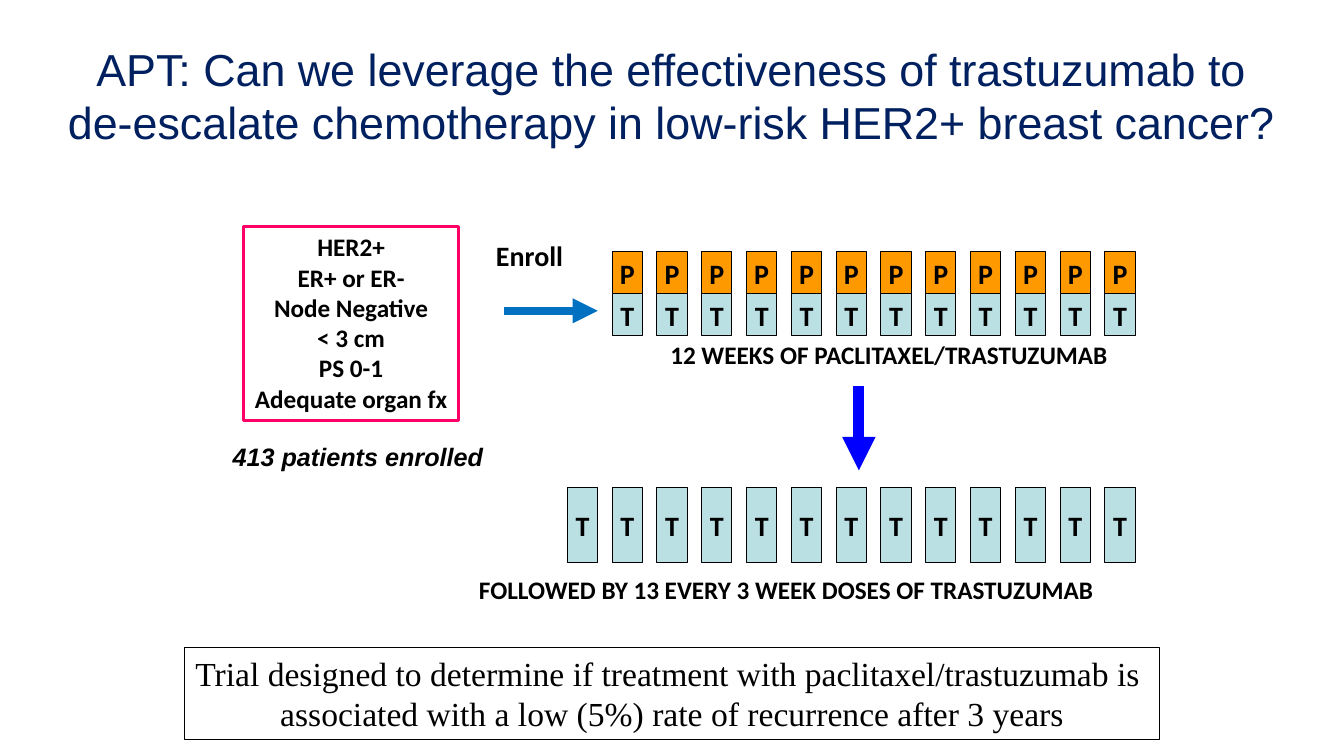
from lxml.etree import SubElement
from pptx import Presentation
from pptx.dml.color import RGBColor
from pptx.enum.shapes import MSO_CONNECTOR, MSO_SHAPE
from pptx.enum.text import MSO_ANCHOR, MSO_AUTO_SIZE, PP_ALIGN
from pptx.oxml.ns import qn
from pptx.util import Pt

TITLE = ("APT: Can we leverage the effectiveness of trastuzumab to "
         "de-escalate chemotherapy in low-risk HER2+ breast cancer?")
ELIGIBILITY = ["HER2+", "ER+ or ER-", "Node Negative", "< 3 cm", "PS 0-1",
               "Adequate organ fx"]
CONCLUSION = [
    "Trial designed to determine if treatment with paclitaxel/trastuzumab is ",
    "associated with a low (5%) rate of recurrence after 3 years",
]
BLACK = "000000"
TRASTUZUMAB_FILL = "BBE0E3"
PACLITAXEL_FILL = "FF9900"
FIRST_DOSE_LEFT = 405.3
DOSE_STEP = 32
DOSE_WIDTH = 21.6
MAINTENANCE_DOSES = 13


def rgb(value):
    return RGBColor.from_string(value)


def write(shape, lines, size=18, font="Calibri", color=BLACK, bold=False,
          italic=False, anchor=MSO_ANCHOR.TOP, wrap=False):
    frame = shape.text_frame
    frame.auto_size = MSO_AUTO_SIZE.NONE
    frame.word_wrap = wrap
    frame.vertical_anchor = anchor
    for index, line in enumerate(lines):
        para = frame.add_paragraph() if index else frame.paragraphs[0]
        para.alignment = PP_ALIGN.CENTER
        span = para.add_run()
        span.text = line
        span.font.name = font
        span.font.size = Pt(size)
        span.font.bold = bold
        span.font.italic = italic
        span.font.color.rgb = rgb(color)


def add_title(page, text):
    title = page.shapes.title
    title.left, title.top = Pt(38.2), Pt(23)
    title.width, title.height = Pt(883.4), Pt(90)
    write(title, [text], size=32, font="Arial", color="002060",
          anchor=MSO_ANCHOR.MIDDLE, wrap=True)


def add_label(page, text, left, top, width, height, **style):
    label = page.shapes.add_textbox(Pt(left), Pt(top), Pt(width), Pt(height))
    write(label, [text], bold=True, **style)


def add_box(page, lines, left, top, width, height, fill=None, line=BLACK,
            weight=0.75, **style):
    box = page.shapes.add_shape(MSO_SHAPE.RECTANGLE, Pt(left), Pt(top),
                                Pt(width), Pt(height))
    box.shadow.inherit = False
    if fill:
        box.fill.solid()
        box.fill.fore_color.rgb = rgb(fill)
    else:
        box.fill.background()
    box.line.color.rgb = rgb(line)
    box.line.width = Pt(weight)
    write(box, lines, **style)


def add_dose(page, letter, column, top, height, fill):
    add_box(page, [letter], FIRST_DOSE_LEFT + column * DOSE_STEP, top,
            DOSE_WIDTH, height, fill=fill, size=20, bold=True,
            anchor=MSO_ANCHOR.MIDDLE)


def add_arrow(page, start, end, color, weight):
    arrow = page.shapes.add_connector(
        MSO_CONNECTOR.STRAIGHT, *(Pt(value) for value in (*start, *end)))
    arrow.line.color.rgb = rgb(color)
    arrow.line.width = Pt(weight)
    SubElement(arrow.line._get_or_add_ln(), qn("a:tailEnd"), type="triangle")
    SubElement(arrow._element.spPr, qn("a:effectLst"))


def main():
    deck = Presentation()
    deck.slide_width, deck.slide_height = Pt(960), Pt(540)
    page = deck.slides.add_slide(deck.slide_layouts[5])

    add_title(page, TITLE)
    add_box(page, ELIGIBILITY, 174, 162, 153.6, 138.5, line="FF0066",
            weight=2.25, bold=True)
    add_label(page, "413 patients enrolled", 156, 312, 199.4, 51,
              font="Arial", italic=True)
    add_label(page, "Enroll", 347, 167, 62.6, 31.5, size=20)
    add_arrow(page, (360, 222), (427, 222), "0070C0", 6)

    # The combined doses line up with all maintenance doses but the first.
    for column in range(1, MAINTENANCE_DOSES):
        add_dose(page, "T", column, 210, 30, TRASTUZUMAB_FILL)
        add_dose(page, "P", column, 180, 30, PACLITAXEL_FILL)
    add_label(page, "12 WEEKS OF PACLITAXEL/TRASTUZUMAB", 470, 239, 330, 29)
    add_arrow(page, (613.5, 276), (613.5, 336), "0000FF", 8)

    for column in range(MAINTENANCE_DOSES):
        add_dose(page, "T", column, 348, 54, TRASTUZUMAB_FILL)
    add_label(page, "FOLLOWED BY 13 EVERY 3 WEEK DOSES OF TRASTUZUMAB",
              332.6, 407, 458, 29)
    add_box(page, CONCLUSION, 132, 462.5, 696, 65.5, size=24,
            font="Times New Roman")

    deck.save("out.pptx")


if __name__ == "__main__":
    main()
